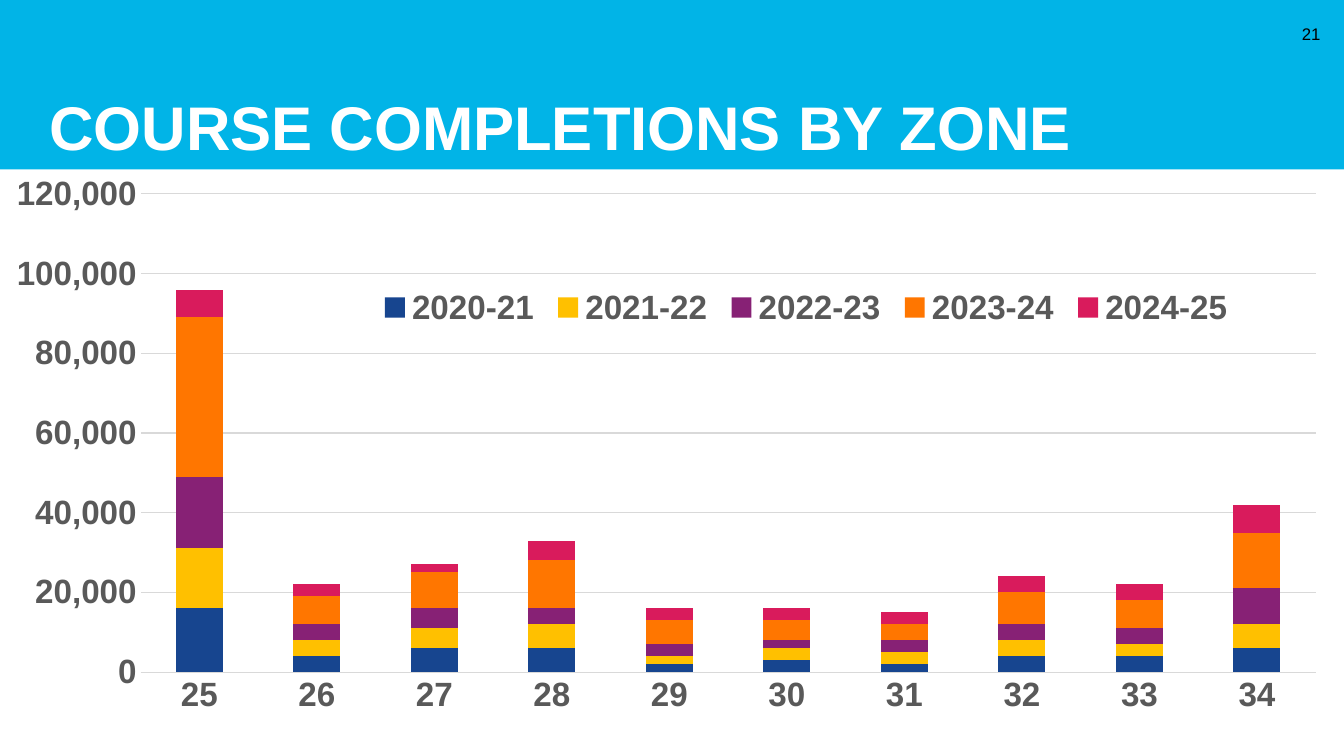
from pptx import Presentation
from pptx.chart.data import CategoryChartData as ChartData
from pptx.dml.color import RGBColor as RGB
from pptx.enum.chart import XL_CHART_TYPE as Kind, XL_LEGEND_POSITION as Side
from pptx.enum.chart import XL_TICK_MARK as Tick
from pptx.enum.shapes import MSO_SHAPE as Form
from pptx.enum.text import MSO_ANCHOR as Anchor, MSO_AUTO_SIZE as Fit, PP_ALIGN as Align
from pptx.oxml import parse_xml
from pptx.oxml.ns import nsdecls, qn
from pptx.util import Pt

SKY = RGB(0x01, 0xB4, 0xE7)
WHITE = RGB(0xFF, 0xFF, 0xFF)
BLACK = RGB(0, 0, 0)
GREY = RGB(0x59, 0x59, 0x59)
RULE = RGB(0xD9, 0xD9, 0xD9)
FONT = "Arial"

ZONES = [str(zone) for zone in range(25, 35)]
YEARS = [  # year, colour, completions per zone in thousands
    ("2020-21", RGB(0x17, 0x45, 0x8F), [16, 4, 6, 6, 2, 3, 2, 4, 4, 6]),
    ("2021-22", RGB(0xFF, 0xC0, 0x00), [15, 4, 5, 6, 2, 3, 3, 4, 3, 6]),
    ("2022-23", RGB(0x87, 0x21, 0x75), [18, 4, 5, 4, 3, 2, 3, 4, 4, 9]),
    ("2023-24", RGB(0xFF, 0x76, 0x00), [40, 7, 9, 12, 6, 5, 4, 8, 7, 14]),
    ("2024-25", RGB(0xD9, 0x1B, 0x5C), [7, 3, 2, 5, 3, 3, 3, 4, 4, 7]),
]


def style(font, size, color, bold=False):
    font.name, font.size, font.bold = FONT, Pt(size), bold
    font.color.rgb = color


def write(para, text, size, color, bold=False):
    run = para.add_run()
    run.text = text
    style(run.font, size, color, bold)


def layout(x, y, w, h, inner=False):
    """Manual chart layout, in fractions of the chart."""
    target = '<c:layoutTarget val="inner"/>' if inner else ""
    return parse_xml(
        f'<c:layout {nsdecls("c")}><c:manualLayout>{target}'
        '<c:xMode val="edge"/><c:yMode val="edge"/>'
        f'<c:x val="{x}"/><c:y val="{y}"/><c:w val="{w}"/><c:h val="{h}"/>'
        '</c:manualLayout></c:layout>')


def header(slide, x, y, w, h):
    # Blue band, placed behind the title
    band = slide.shapes.add_shape(Form.RECTANGLE, Pt(x), Pt(y), Pt(w), Pt(h))
    band.shadow.inherit = False
    band.fill.solid()
    band.fill.fore_color.rgb = SKY
    band.line.fill.background()
    slide.shapes.title._element.addprevious(band._element)

    # Title
    title = slide.shapes.title
    title.left, title.top = Pt(x + 28), Pt(y + 38)
    title.width, title.height = Pt(w - 54), Pt(h - 34.5)
    frame = title.text_frame
    frame.auto_size = Fit.NONE
    frame.word_wrap = True
    frame.vertical_anchor = Anchor.BOTTOM
    frame.margin_left = frame.margin_right = frame.margin_bottom = Pt(7.2)
    frame.margin_top = 0
    para = frame.paragraphs[0]
    para.alignment = Align.LEFT
    para.line_spacing = 0.9
    write(para, "COURSE COMPLETIONS BY ZONE", 44, WHITE, True)

    # Page number
    page = slide.shapes.add_textbox(Pt(x + w - 42.7), Pt(y + 9.5), Pt(33), Pt(29))
    frame = page.text_frame
    frame.word_wrap = True
    frame.vertical_anchor = Anchor.MIDDLE
    para = frame.paragraphs[0]
    para.alignment = Align.RIGHT
    write(para, "21", 12, BLACK)


def graph(slide, x, y, w, h):
    data = ChartData(number_format="#,##0")
    data.categories = ZONES
    for year, _, counts in YEARS:
        data.add_series(year, [count * 1000 for count in counts])
    chart = slide.shapes.add_chart(
        Kind.COLUMN_STACKED, Pt(x), Pt(y), Pt(w), Pt(h), data).chart
    style(chart.font, 10, BLACK)
    chart.has_title = False

    # Columns
    plot = chart.plots[0]
    plot.gap_width, plot.overlap = 150, 100
    plot.vary_by_categories = False
    for series, (_, color, _) in zip(plot.series, YEARS):
        series.format.fill.solid()
        series.format.fill.fore_color.rgb = color
    area = chart._chartSpace.chart.plotArea
    for old in area.findall(qn("c:layout")):
        area.remove(old)
    area.insert(0, layout(0.082, 0.035, 0.906, 0.821, inner=True))

    # Axes
    zones, counts = chart.category_axis, chart.value_axis
    for axis in (zones, counts):
        axis.major_tick_mark = axis.minor_tick_mark = Tick.NONE
        style(axis.tick_labels.font, 24, GREY, True)
    counts.minimum_scale, counts.maximum_scale = 0, 120000
    counts.major_unit = 20000
    counts.tick_labels.number_format = "#,##0"
    counts.tick_labels.number_format_is_linked = False
    counts.format.line.fill.background()
    for line in (zones.format.line, counts.major_gridlines.format.line):
        line.color.rgb = RULE
        line.width = Pt(0.75)

    # Legend, laid over the plot
    chart.has_legend = True
    legend = chart.legend
    legend.position = Side.BOTTOM
    legend.include_in_layout = False
    style(legend.font, 24, GREY, True)
    side = legend._element.find(qn("c:legendPos"))
    side.addnext(layout(0.26, 0.19, 0.67, 0.08))


def main():
    deck = Presentation()
    deck.slide_width, deck.slide_height = Pt(960), Pt(540)
    slide = deck.slides.add_slide(deck.slide_layouts[5])
    header(slide, 0, 0, 960, 121)
    graph(slide, 12, 124, 939, 416)
    deck.save("out.pptx")


if __name__ == "__main__":
    main()
